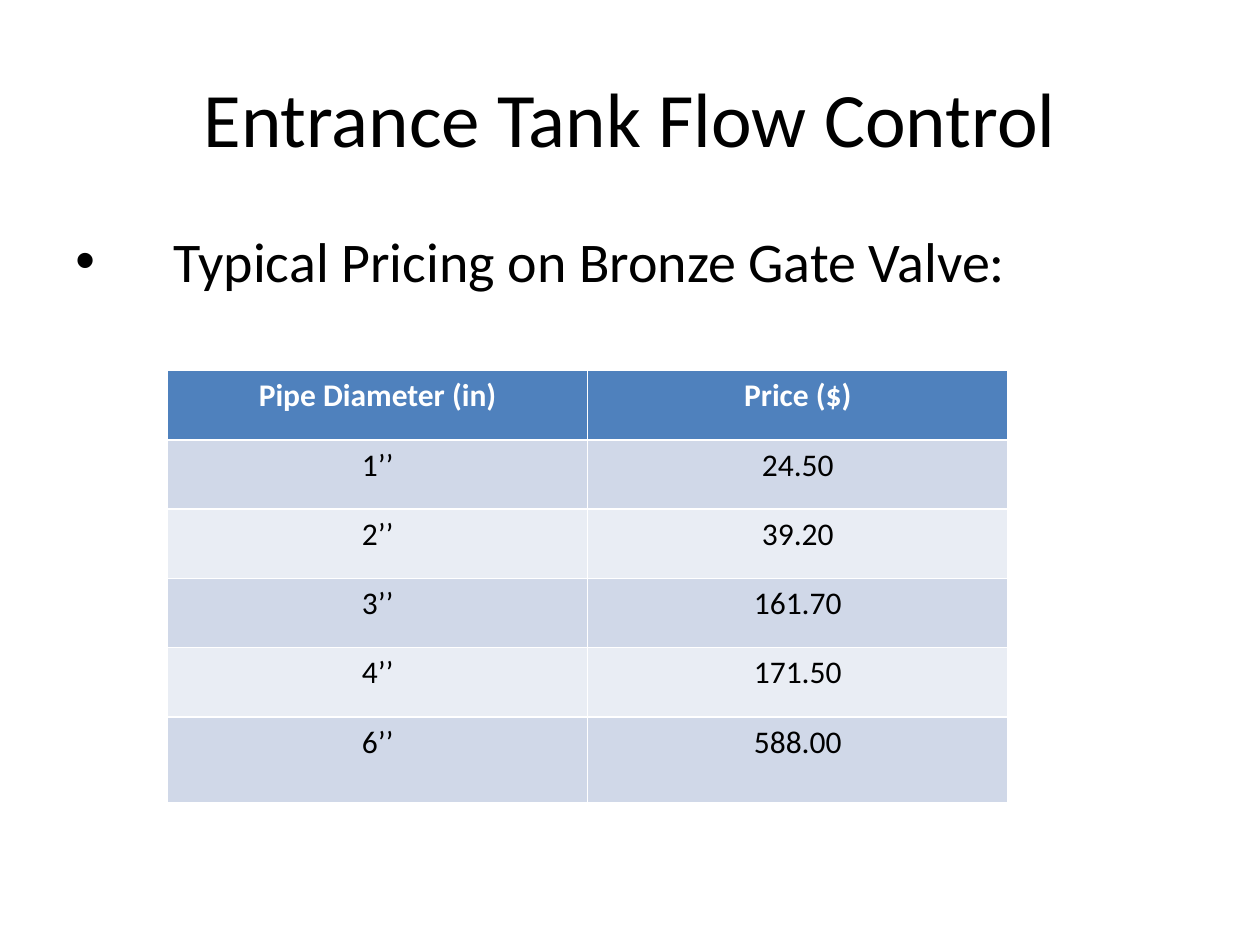
from typing import NamedTuple

import pptx
import pptx.dml.color
import pptx.enum.text
import pptx.util
from lxml import etree
from pptx.oxml.ns import qn

Inches = pptx.util.Inches
Pt = pptx.util.Pt
RGBColor = pptx.dml.color.RGBColor
PP_ALIGN = pptx.enum.text.PP_ALIGN
MSO_ANCHOR = pptx.enum.text.MSO_ANCHOR

FONT = "Calibri"
BLACK = RGBColor(0x00, 0x00, 0x00)
WHITE = RGBColor(0xFF, 0xFF, 0xFF)
HEADER_BLUE = RGBColor(0x4F, 0x81, 0xBD)
BANDS = (RGBColor(0xD0, 0xD8, 0xE8), RGBColor(0xE9, 0xED, 0xF4))


class ValvePrice(NamedTuple):
    diameter: str
    price: str


HEADINGS = ValvePrice("Pipe Diameter (in)", "Price ($)")
PRICES = (
    ValvePrice("1’’", "24.50"),
    ValvePrice("2’’", "39.20"),
    ValvePrice("3’’", "161.70"),
    ValvePrice("4’’", "171.50"),
    ValvePrice("6’’", "588.00"),
)


def style_paragraph(paragraph, size: float, color: RGBColor,
                    align: PP_ALIGN, bold: bool = False) -> None:
    paragraph.alignment = align
    font = paragraph.font
    font.name, font.size, font.bold = FONT, Pt(size), bold
    font.color.rgb = color


def add_bullet(paragraph, hanging: float) -> None:
    properties = paragraph._p.get_or_add_pPr()
    properties.set("marL", str(Inches(hanging)))
    properties.set("indent", str(-Inches(hanging)))
    bullet_font = etree.Element(qn("a:buFont"), typeface="Arial")
    bullet = etree.Element(qn("a:buChar"), char="•")
    properties.insert(0, bullet_font)
    properties.insert(1, bullet)


def add_title(slide) -> None:
    title = slide.shapes.title
    title.left, title.top = Inches(0.5), Inches(0.3)
    title.width, title.height = Inches(9), Inches(1.25)
    title.text_frame.text = "Entrance Tank Flow Control"
    title.text_frame.vertical_anchor = MSO_ANCHOR.MIDDLE
    style_paragraph(title.text_frame.paragraphs[0], 44, BLACK, PP_ALIGN.CENTER)


def add_pricing_intro(slide) -> None:
    intro = slide.shapes.add_textbox(
        Inches(0.5), Inches(1.75), Inches(9), Inches(4.95)).text_frame
    intro.word_wrap = True
    intro.text = "Typical Pricing on Bronze Gate Valve:"
    style_paragraph(intro.paragraphs[0], 32, BLACK, PP_ALIGN.LEFT)
    add_bullet(intro.paragraphs[0], 0.78)


def add_price_table(slide) -> None:
    rows = (HEADINGS, *PRICES)
    table = slide.shapes.add_table(
        len(rows), len(HEADINGS),
        Inches(1.33), Inches(2.94), Inches(6.67), Inches(3.43)).table
    for row in table.rows:
        row.height = Inches(0.55)
    table.rows[len(rows) - 1].height = Inches(0.68)

    for row_index, entry in enumerate(rows):
        is_header = row_index == 0
        fill = HEADER_BLUE if is_header else BANDS[(row_index - 1) % 2]
        color = WHITE if is_header else BLACK
        for column_index, value in enumerate(entry):
            cell = table.cell(row_index, column_index)
            cell.text = value
            cell.fill.solid()
            cell.fill.fore_color.rgb = fill
            style_paragraph(cell.text_frame.paragraphs[0], 18, color,
                            PP_ALIGN.CENTER, bold=is_header)


def main() -> None:
    presentation = pptx.Presentation()
    presentation.slide_width = Inches(10)
    presentation.slide_height = Inches(7.5)
    slide = presentation.slides.add_slide(presentation.slide_layouts[5])
    add_title(slide)
    add_pricing_intro(slide)
    add_price_table(slide)
    presentation.save("out.pptx")


if __name__ == "__main__":
    main()
